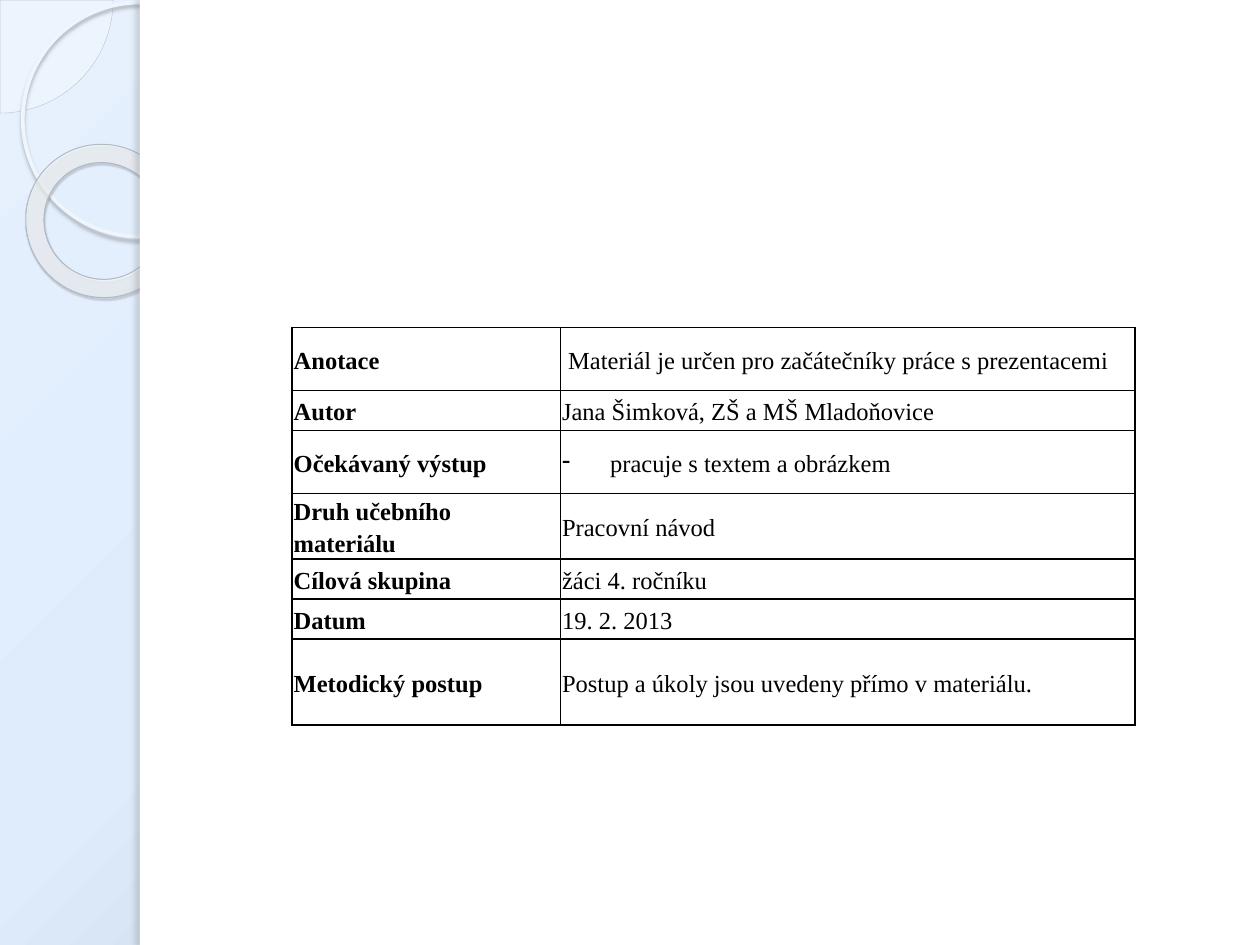
import pptx
import pptx.dml.color
import pptx.enum.shapes
import pptx.enum.text
import pptx.oxml
import pptx.oxml.ns
import pptx.util
from dataclasses import dataclass

Cm, Pt = pptx.util.Cm, pptx.util.Pt
KIND = pptx.enum.shapes.MSO_SHAPE
NS = pptx.oxml.ns.nsdecls("a")


@dataclass(frozen=True)
class Theme:
    white: str = "FFFFFF"
    black: str = "000000"
    pie: str = "F9FBFD"
    edge: str = "BFC7D1"
    hoop: str = "EEF5FD"
    rim: str = "B1BAC5"
    font: str = "Times New Roman"
    size: int = 14
    # Gradient stops: position, colour, opacity
    sky: tuple = ((0, "E7F1FE", 100), (40, "DEECFC", 100), (100, "A7B3C1", 100))
    ring: tuple = ((0, "FAFCFE", 70), (70, "FDFEFF", 55), (100, "BCCCE0", 60))


THEME = Theme()

# Label, value, row height in cm
ROWS = [
    ("Anotace", " Materiál je určen pro začátečníky práce s prezentacemi", 1.27),
    ("Autor", "Jana Šimková, ZŠ a MŠ Mladoňovice", 0.81),
    ("Očekávaný výstup", "pracuje s textem a obrázkem", 1.27),
    ("Druh učebního materiálu", "Pracovní návod", 1.27),
    ("Cílová skupina", "žáci 4. ročníku", 0.81),
    ("Datum", "19. 2. 2013", 0.81),
    ("Metodický postup", "Postup a úkoly jsou uvedeny přímo v materiálu.", 1.73),
]
LIST_ROW = 2


def rgb(code):
    return pptx.dml.color.RGBColor.from_string(code)


def tint(code, alpha=100):
    return f'<a:srgbClr val="{code}"><a:alpha val="{alpha * 1000}"/></a:srgbClr>'


def paint(host, fill, xml):
    """Swap the plain fill of a shape or background for one given as XML."""
    fill.solid()
    fill.fore_color.rgb = rgb(THEME.white)
    old = host.xpath("./p:spPr/a:solidFill | .//p:bgPr/a:solidFill")[0]
    old.getparent().replace(old, pptx.oxml.parse_xml(xml))


def radial(stops, left, top):
    """Circular gradient around a point given in percent of the area."""
    marks = "".join(
        f'<a:gs pos="{pos * 1000}">{tint(code, alpha)}</a:gs>'
        for pos, code, alpha in stops
    )
    return (
        f'<a:gradFill {NS} rotWithShape="1"><a:gsLst>{marks}</a:gsLst>'
        f'<a:path path="circle"><a:fillToRect l="{left * 1000}" t="{top * 1000}" '
        f'r="{(100 - left) * 1000}" b="{(100 - top) * 1000}"/></a:path></a:gradFill>'
    )


def add_part(slide, kind, box, line=None, width=0):
    """Preset shape without fill or shadow, with an optional outline."""
    part = slide.shapes.add_shape(kind, *(Cm(n) for n in box))
    part.shadow.inherit = False
    part.fill.background()
    if line:
        part.line.color.rgb = rgb(line)
        part.line.width = Pt(width)
    else:
        part.line.fill.background()
    return part


def add_shade(part, code, alpha, blur, dist, angle):
    part.element.xpath("./p:spPr/a:effectLst")[0].append(pptx.oxml.parse_xml(
        f'<a:outerShdw {NS} blurRad="{Pt(blur)}" dist="{Pt(dist)}" '
        f'dir="{angle * 60000}" algn="tl" rotWithShape="0">'
        f"{tint(code, alpha)}</a:outerShdw>"
    ))


def add_panel(slide):
    """Blue side strip with circles, and the white page beside it."""
    pie = add_part(slide, KIND.PIE, (-2.27, -2.27, 4.55, 4.55), THEME.edge, 0.25)
    pie.adjustments[0], pie.adjustments[1] = 0, 54
    paint(pie.element, pie.fill,
          f"<a:solidFill {NS}>{tint(THEME.pie, 33)}</a:solidFill>")

    hoop = add_part(slide, KIND.OVAL, (0.46, 0.05, 4.72, 4.72), THEME.hoop, 2.15)
    add_shade(hoop, "A7ACB3", 85, 2, 2, 90)

    ring = add_part(slide, KIND.DONUT, (0.51, 2.92, 3.12, 3.07), THEME.rim, 0.58)
    ring.adjustments[0] = 0.12
    ring.rotation = 38.6
    paint(ring.element, ring.fill, radial(THEME.ring, -408, -50))
    add_shade(ring, "52555A", 35, 1, 1.2, 75)

    for width in (22.58, 0.2):
        page = add_part(slide, KIND.RECTANGLE, (2.82, 0, width, 19.05))
        page.fill.solid()
        page.fill.fore_color.rgb = rgb(THEME.white)
    add_shade(page, "717477", 25, 3, 3, 180)


def frame(cell):
    """White cell with a thin black border on all sides."""
    cell.fill.solid()
    cell.fill.fore_color.rgb = rgb(THEME.white)
    props = cell._tc.get_or_add_tcPr()
    for spot, side in enumerate("LRTB"):
        props.insert(spot, pptx.oxml.parse_xml(
            f'<a:ln{side} {NS} w="{Pt(1)}"><a:solidFill>{tint(THEME.black)}'
            f"</a:solidFill></a:ln{side}>"
        ))


def write(cell, text, bold):
    cell.margin_left = cell.margin_right = Cm(0.03)
    cell.margin_top = cell.margin_bottom = Cm(0.03)
    cell.vertical_anchor = pptx.enum.text.MSO_ANCHOR.MIDDLE
    para = cell.text_frame.paragraphs[0]
    para.text = text
    para.line_spacing = 1.15
    font = para.runs[0].font
    font.name, font.size, font.bold = THEME.font, Pt(THEME.size), bold
    font.color.rgb = rgb(THEME.black)


def add_dash(cell):
    """Dash bullet with a hanging indent."""
    props = cell.text_frame.paragraphs[0]._p.get_or_add_pPr()
    props.set("marL", str(Cm(0.97)))
    props.set("indent", str(-Cm(0.97)))
    props.append(pptx.oxml.parse_xml(f'<a:buChar {NS} char="-"/>'))


def add_grid(slide):
    high = sum(row[2] for row in ROWS)
    grid = slide.shapes.add_table(
        len(ROWS), 2, Cm(5.89), Cm(6.6), Cm(16.99), Cm(high)
    ).table
    grid.first_row = grid.horz_banding = False
    for col, width in zip(grid.columns, (5.41, 11.58)):
        col.width = Cm(width)
    for num, (label, value, height) in enumerate(ROWS):
        grid.rows[num].height = Cm(height)
        for col, text in enumerate((label, value)):
            cell = grid.cell(num, col)
            write(cell, text, col == 0)
            frame(cell)
    add_dash(grid.cell(LIST_ROW, 1))


def main():
    deck = pptx.Presentation()
    deck.slide_width, deck.slide_height = Cm(25.4), Cm(19.05)
    slide = deck.slides.add_slide(deck.slide_layouts[6])
    # Background, side strip, then the table
    paint(slide.element, slide.background.fill, radial(THEME.sky, -24, -20))
    add_panel(slide)
    add_grid(slide)
    deck.save("out.pptx")


if __name__ == "__main__":
    main()
